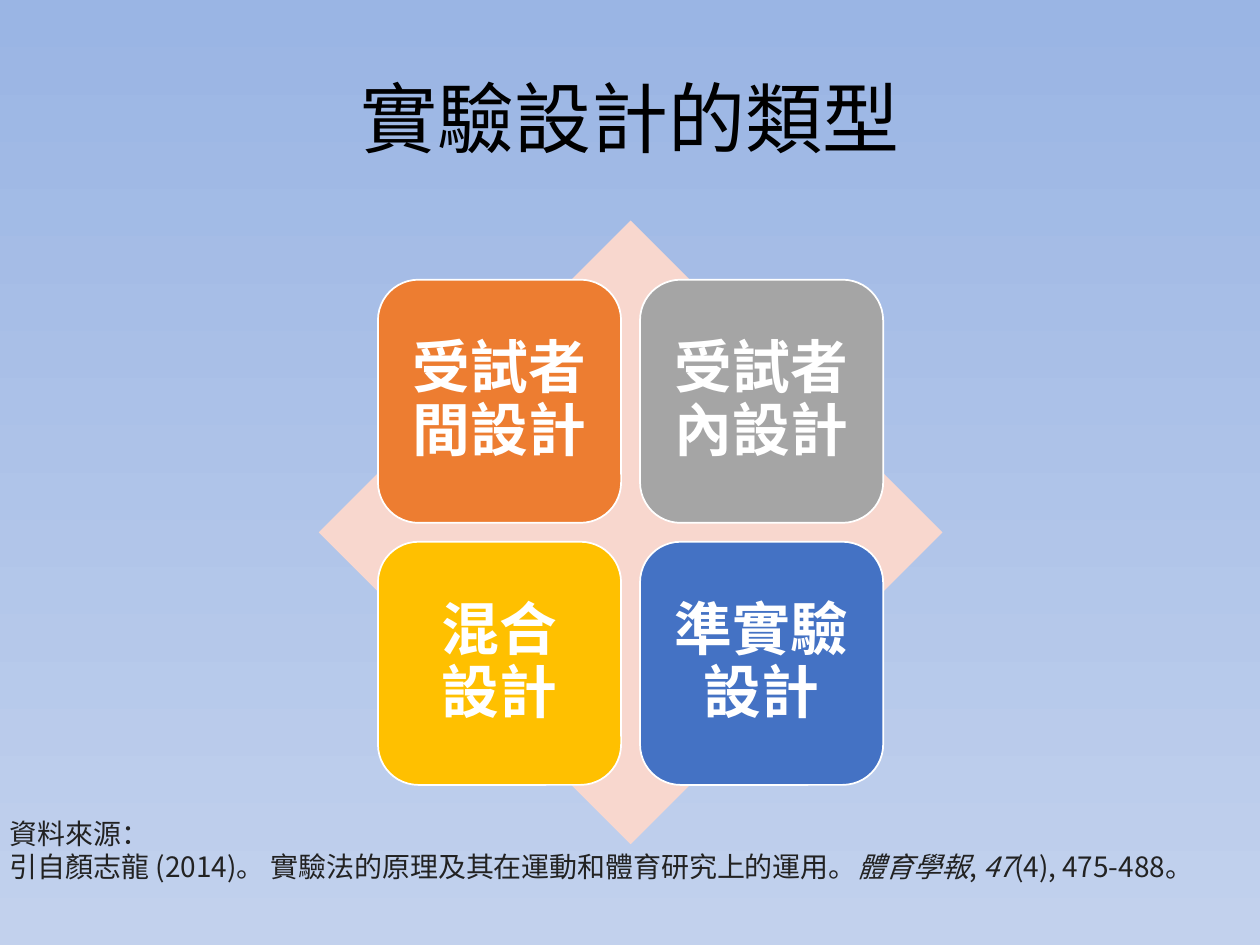
from dataclasses import dataclass

from lxml import etree
from pptx import Presentation
from pptx.dml.color import RGBColor
from pptx.enum.shapes import MSO_SHAPE
from pptx.enum.text import MSO_ANCHOR, PP_ALIGN
from pptx.oxml.ns import qn
from pptx.util import Inches, Pt


@dataclass(frozen=True)
class Theme:
    font: str = "Noto Sans CJK SC"
    background: tuple = ("9AB5E4", "C2D1ED")
    title: str = "000000"
    diamond: str = "F8D7CE"
    tiles: tuple = ("ED7D31", "A5A5A5", "FFC000", "4472C4")
    white: str = "FFFFFF"
    source: str = "222222"
    title_size: int = 44
    tile_size: int = 33
    source_size: int = 16


THEME = Theme()
DESIGNS = ("受試者間設計", "受試者內設計", "混合 設計", "準實驗設計")
SOURCE = (
    (("資料來源：", False),),
    (
        ("引自顏志龍 (2014)。 實驗法的原理及其在運動和體育研究上的運用。", False),
        ("體育學報", True),
        (",\u00a0", False),
        ("47", True),
        ("(4), 475-488。", False),
    ),
)


def set_attributes(target, **values):
    for name, value in values.items():
        setattr(target, name, value)


def add_run(paragraph, text, size, color, bold=False, italic=False):
    run = paragraph.add_run()
    run.text = text
    set_attributes(run.font, name=THEME.font, size=Pt(size), bold=bold, italic=italic)
    run.font.color.rgb = RGBColor.from_string(color)
    # East Asian glyphs take their typeface from a separate element
    east_asian = etree.SubElement(run.font._element, qn("a:ea"))
    east_asian.set("typeface", THEME.font)


def add_filled_shape(slide, preset, box, color):
    shape = slide.shapes.add_shape(preset, *map(Inches, box))
    shape.shadow.inherit = False
    shape.fill.solid()
    shape.fill.fore_color.rgb = RGBColor.from_string(color)
    shape.line.fill.background()
    return shape


def paint_background(slide):
    fill = slide.background.fill
    fill.gradient()
    fill.gradient_angle = 270
    for stop, position, color in zip(fill.gradient_stops, (0, 1), THEME.background):
        stop.position = position
        stop.color.rgb = RGBColor.from_string(color)


def place_title(slide, box, text):
    title = slide.shapes.title
    left, top, width, height = map(Inches, box)
    set_attributes(title, left=left, top=top, width=width, height=height)
    title.text_frame.vertical_anchor = MSO_ANCHOR.MIDDLE
    paragraph = title.text_frame.paragraphs[0]
    paragraph.alignment = PP_ALIGN.CENTER
    add_run(paragraph, text, THEME.title_size, THEME.title)


def place_matrix(slide, box, labels):
    """Diamond with a two-by-two grid of tiles centred on it."""
    left, top, width, height = box
    add_filled_shape(slide, MSO_SHAPE.DIAMOND, box, THEME.diamond)
    tile, gap, inset = 1.93, 0.15, Inches(0.14)
    first_left = left + (width - 2 * tile - gap) / 2
    first_top = top + (height - 2 * tile - gap) / 2
    for index, (label, color) in enumerate(zip(labels, THEME.tiles)):
        row, column = divmod(index, 2)
        tile_box = (first_left + column * (tile + gap),
                    first_top + row * (tile + gap), tile, tile)
        shape = add_filled_shape(slide, MSO_SHAPE.ROUNDED_RECTANGLE, tile_box, color)
        shape.line.color.rgb = RGBColor.from_string(THEME.white)
        shape.line.width = Pt(1)
        set_attributes(shape.text_frame, word_wrap=True,
                       vertical_anchor=MSO_ANCHOR.MIDDLE,
                       margin_left=inset, margin_right=inset,
                       margin_top=inset, margin_bottom=inset)
        paragraph = shape.text_frame.paragraphs[0]
        set_attributes(paragraph, alignment=PP_ALIGN.CENTER, line_spacing=0.9)
        add_run(paragraph, label, THEME.tile_size, THEME.white, bold=True)


def place_source(slide, box, lines):
    frame = slide.shapes.add_textbox(*map(Inches, box)).text_frame
    frame.word_wrap = True
    for index, line in enumerate(lines):
        paragraph = frame.add_paragraph() if index else frame.paragraphs[0]
        for text, italic in line:
            add_run(paragraph, text, THEME.source_size, THEME.source, italic=italic)


def main():
    presentation = Presentation()
    set_attributes(presentation, slide_width=Inches(10), slide_height=Inches(7.5))
    slide = presentation.slides.add_slide(presentation.slide_layouts[5])
    paint_background(slide)
    place_title(slide, (0.5, 0.3, 9, 1.25), "實驗設計的類型")
    place_matrix(slide, (2.53, 1.75, 4.95, 4.95), DESIGNS)
    place_source(slide, (-0.02, 6.43, 10.02, 0.64), SOURCE)
    presentation.save("out.pptx")


if __name__ == "__main__":
    main()
